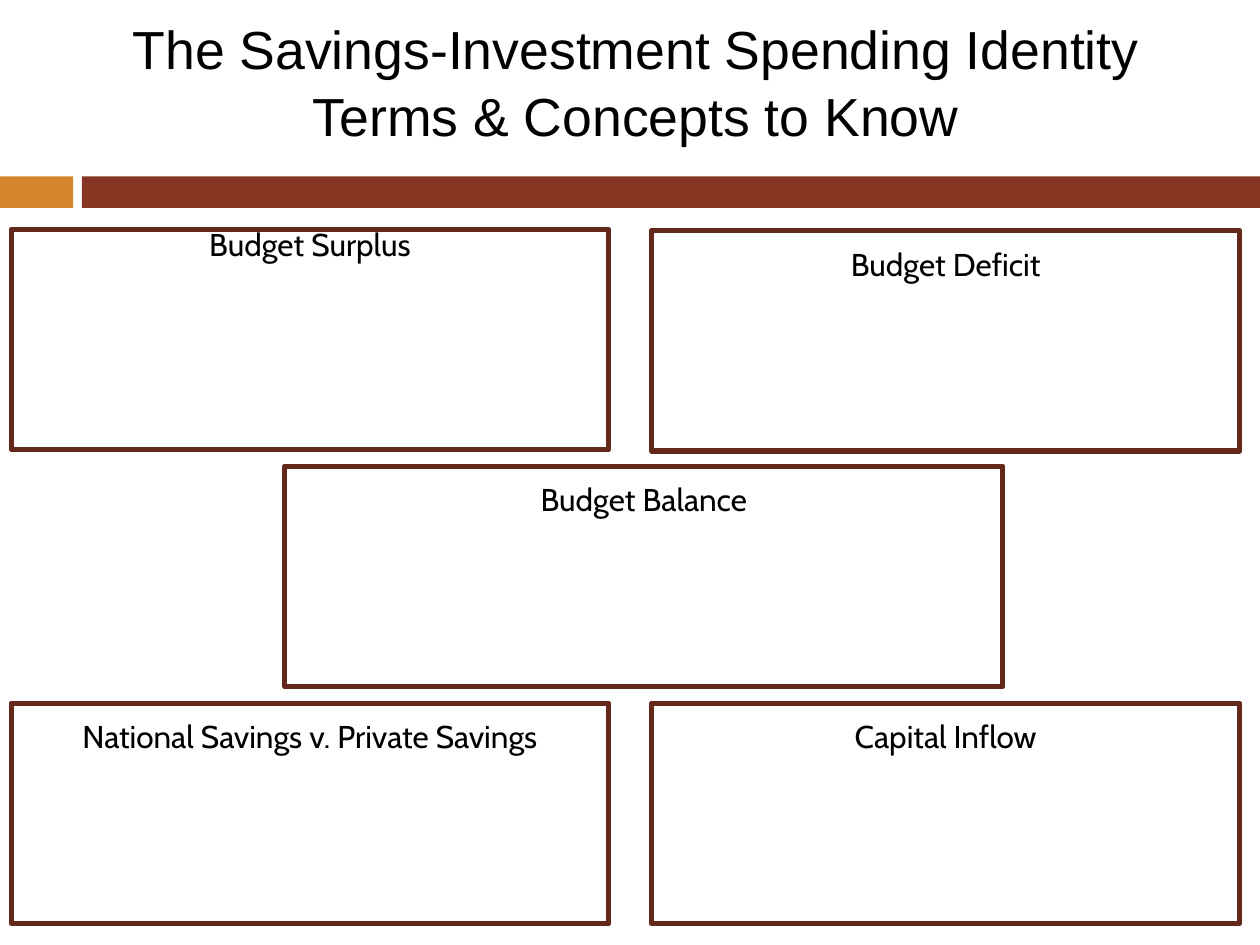
from dataclasses import dataclass

from pptx import Presentation
from pptx.dml.color import RGBColor
from pptx.enum import shapes, text
from pptx.util import Pt


@dataclass(frozen=True)
class Theme:
    accent: str = "D6862D"
    band: str = "873624"
    border: str = "64281B"
    ink: str = "000000"
    title_font: str = "Arial"
    body_font: str = "Cabin"
    title_size: float = 30.6
    term_size: float = 18
    border_width: float = 3


THEME = Theme()


def write_text(frame, words, *, font, size, spacing, anchor, inset=0):
    frame.word_wrap = True
    frame.auto_size = text.MSO_AUTO_SIZE.NONE
    frame.vertical_anchor = anchor
    frame.margin_top = Pt(inset)
    frame.margin_bottom = 0
    frame.text = words
    paragraph = frame.paragraphs[0]
    paragraph.alignment = text.PP_ALIGN.CENTER
    paragraph.line_spacing = spacing
    for run in paragraph.runs:
        run.font.name = font
        run.font.size = Pt(size)
        run.font.color.rgb = RGBColor.from_string(THEME.ink)


def add_rectangle(slide, left, top, width, height, fill=None, border=None):
    rectangle = slide.shapes.add_shape(
        shapes.MSO_SHAPE.RECTANGLE, Pt(left), Pt(top), Pt(width), Pt(height))
    rectangle.shadow.inherit = False
    if fill:
        rectangle.fill.solid()
        rectangle.fill.fore_color.rgb = RGBColor.from_string(fill)
    else:
        rectangle.fill.background()
    if border:
        rectangle.line.color.rgb = RGBColor.from_string(border)
        rectangle.line.width = Pt(THEME.border_width)
    else:
        rectangle.line.fill.background()
    return rectangle


def place_title(slide, left, top, width, height):
    title = slide.shapes.title
    title.left, title.top = Pt(left), Pt(top)
    title.width, title.height = Pt(width), Pt(height)
    write_text(title.text_frame,
               "The Savings-Investment Spending Identity\vTerms & Concepts to Know",
               font=THEME.title_font, size=THEME.title_size, spacing=1.04,
               anchor=text.MSO_ANCHOR.MIDDLE)


def place_divider(slide, left, top, width, height):
    accent_width, gap = 41.8, 5
    band_offset = accent_width + gap
    add_rectangle(slide, left, top, accent_width, height, fill=THEME.accent)
    add_rectangle(slide, left + band_offset, top, width - band_offset, height,
                  fill=THEME.band)


def place_term(slide, term, left, top, width, height, inset=10.5):
    term_box = add_rectangle(slide, left, top, width, height, border=THEME.border)
    write_text(term_box.text_frame, term, font=THEME.body_font,
               size=THEME.term_size, spacing=0.9,
               anchor=text.MSO_ANCHOR.TOP, inset=inset)


def place_terms(slide, left, top, width, height):
    box_height = 126
    left_width, right_width = 341.3, 336.2
    right = left + width - right_width
    bottom = top + height - box_height
    middle = top + (height - box_height) / 2
    place_term(slide, "Budget Surplus", left, top, left_width, box_height, inset=0)
    place_term(slide, "Budget Balance", left + 156.2, middle, 410.4, box_height)
    place_term(slide, "National Savings v. Private Savings",
               left, bottom, left_width, box_height)
    place_term(slide, "Budget Deficit", right, top + 0.7, right_width, box_height)
    place_term(slide, "Capital Inflow", right, bottom, right_width, box_height)


def main():
    deck = Presentation()
    deck.slide_width, deck.slide_height = Pt(720), Pt(540)
    slide = deck.slides.add_slide(deck.slide_layouts.get_by_name("Title Only"))
    place_divider(slide, 0, 100.8, 720, 18)
    place_title(slide, 6.5, 1.4, 713.5, 88.6)
    place_terms(slide, 6.5, 131, 702, 396.8)
    deck.save("out.pptx")


if __name__ == "__main__":
    main()
